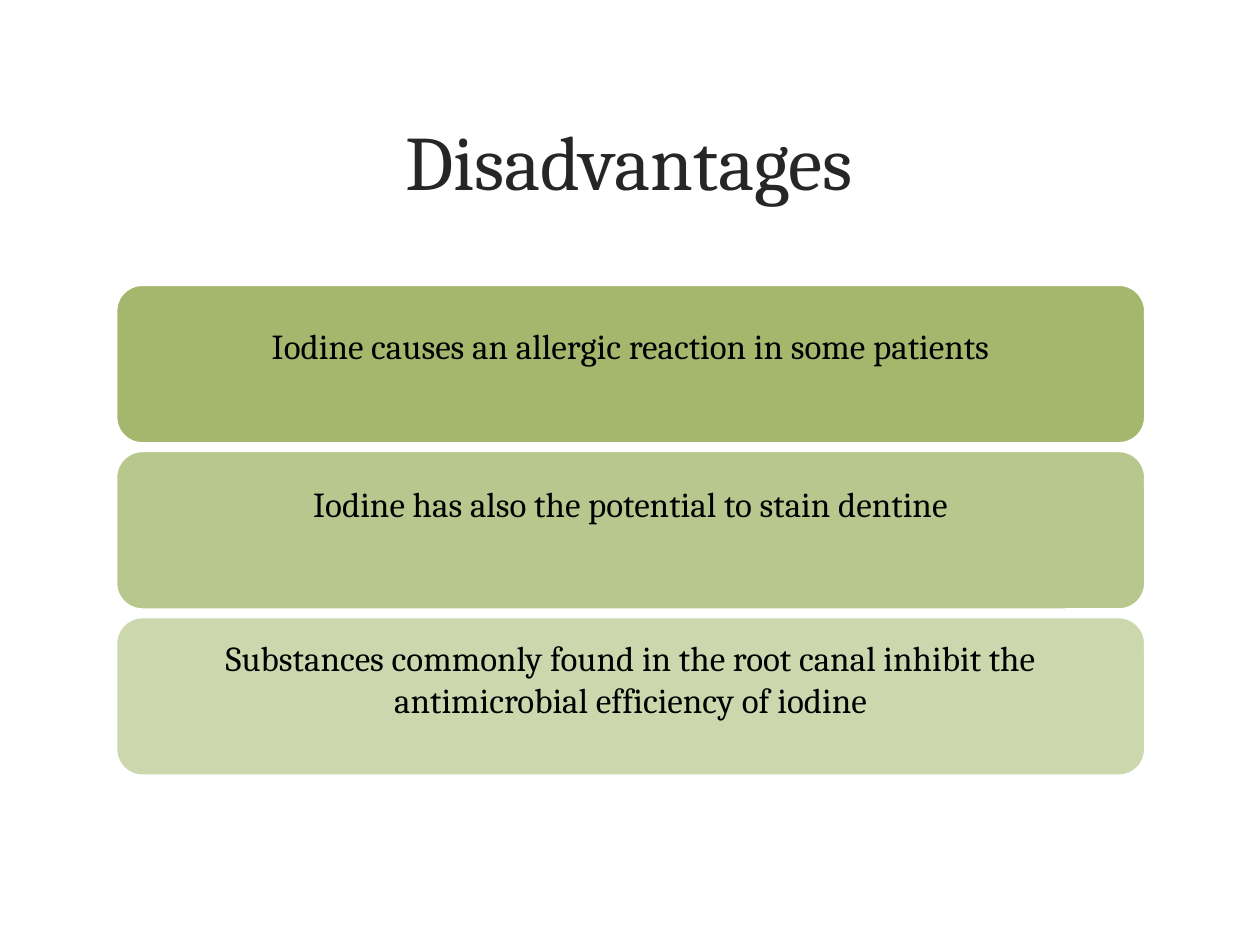
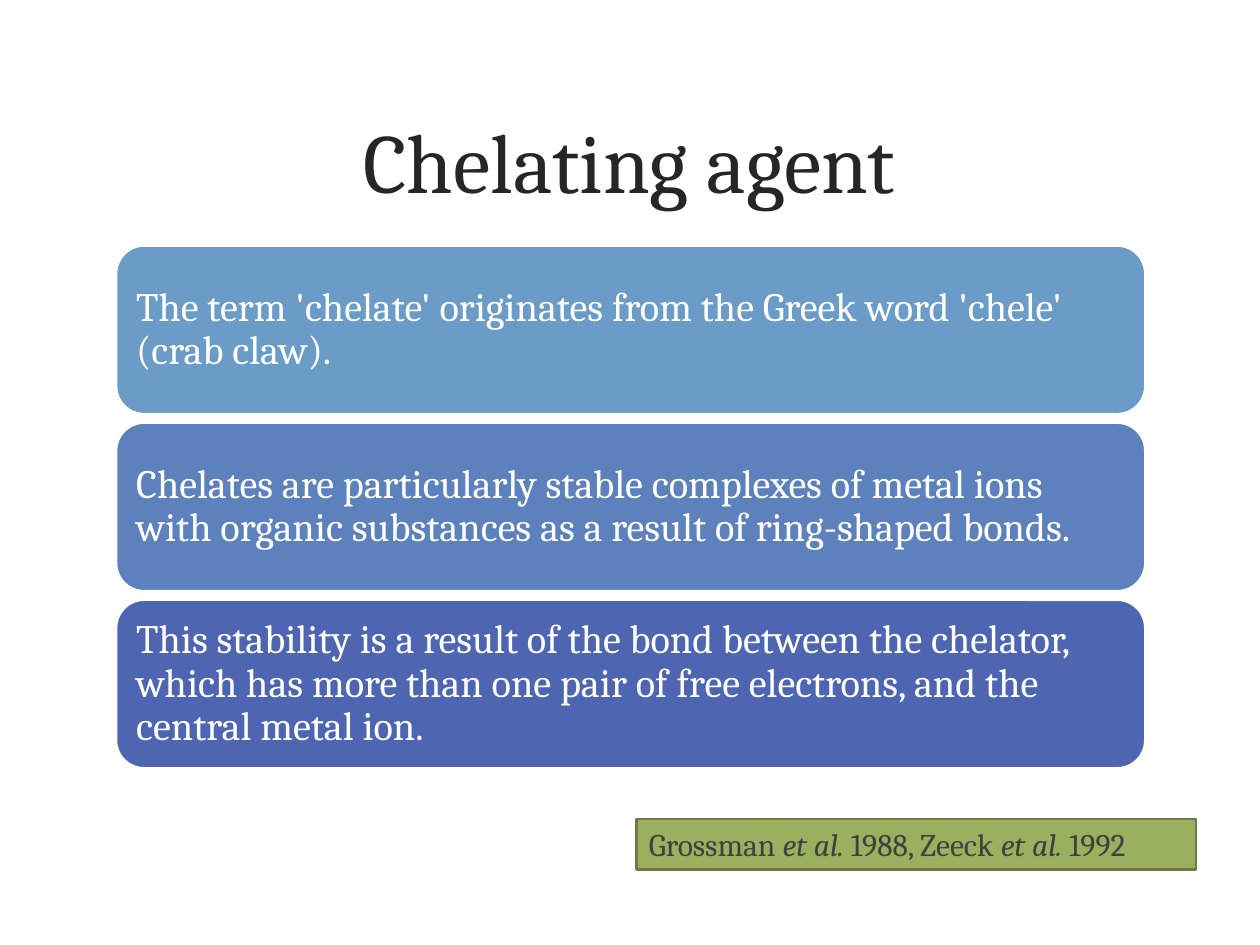
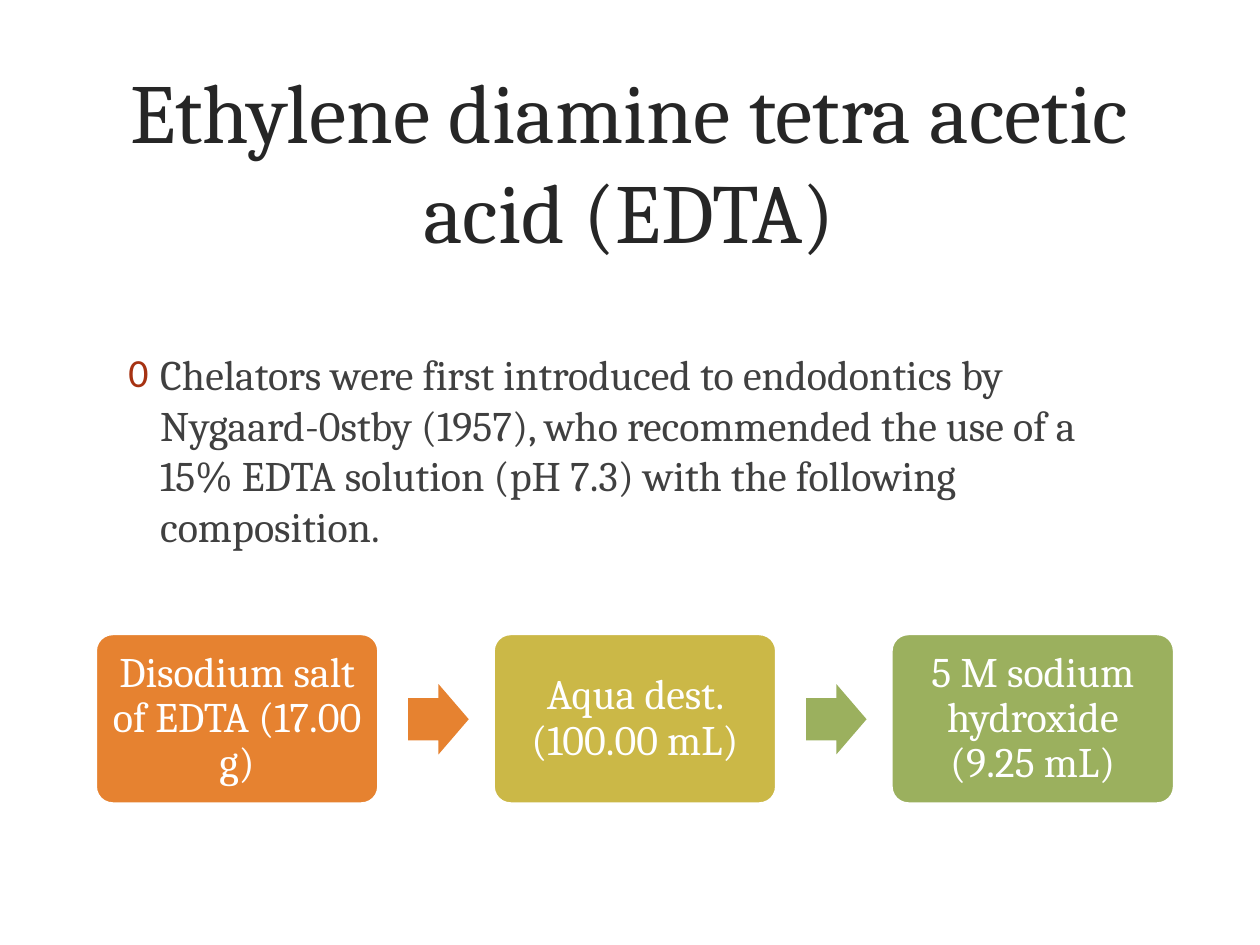
from dataclasses import dataclass

from lxml.etree import SubElement
from pptx import Presentation
from pptx.dml.color import RGBColor
from pptx.enum.shapes import MSO_SHAPE as Preset
from pptx.enum.text import MSO_ANCHOR as Anchor, PP_ALIGN as Align
from pptx.oxml.ns import qn
from pptx.shapes.autoshape import Shape
from pptx.slide import Slide
from pptx.text.text import TextFrame, _Paragraph as Paragraph
from pptx.util import Cm, Pt

FONT = "Cambria"
INK = RGBColor(0x26, 0x26, 0x26)
BODY_GREY = RGBColor(0x40, 0x40, 0x40)
BLACK = RGBColor(0x00, 0x00, 0x00)
WHITE = RGBColor(0xFF, 0xFF, 0xFF)
GREEN = RGBColor(0x9B, 0xB0, 0x5E)
DARK_GREEN = RGBColor(0x6E, 0x7C, 0x43)
SKY = RGBColor(0x6B, 0x9B, 0xC7)
BLUE = RGBColor(0x5C, 0x81, 0xBD)
INDIGO = RGBColor(0x4E, 0x66, 0xB2)
ORANGE = RGBColor(0xE6, 0x82, 0x30)
MUSTARD = RGBColor(0xCB, 0xB8, 0x47)
RUST = "A63212"


@dataclass(frozen=True)
class Area:
    """Left, top, width and height in centimetres."""
    left: float
    top: float
    width: float
    height: float

    def moved(self, right: float = 0, down: float = 0) -> "Area":
        return Area(self.left + right, self.top + down, self.width, self.height)

    def lengths(self) -> tuple[Cm, Cm, Cm, Cm]:
        return Cm(self.left), Cm(self.top), Cm(self.width), Cm(self.height)


@dataclass(frozen=True)
class Card:
    text: str
    fill: RGBColor
    opacity: int = 100
    lift: float = 0  # extra bottom margin, in centimetres
    line_spacing: float = 0.9


TITLE_AREA = Area(1.52, 1.22, 22.33, 4.01)
BODY_AREA = Area(2.34, 6.91, 20.75, 9.73)
CITATION_AREA = Area(12.83, 16.51, 11.28, 1.02)
DRAWBACK_AREA, DRAWBACK_PITCH = Area(2.34, 5.74, 20.75, 3.2), 3.35
CHELATE_AREA, CHELATE_PITCH = Area(2.34, 4.95, 20.75, 3.4), 3.57
STEP_AREA, STEP_PITCH = Area(1.93, 12.78, 5.7, 3.42), 8.02
ARROW_AREA = Area(8.23, 13.79, 1.22, 1.42)

DRAWBACKS = [
    Card("Iodine causes an allergic reaction in some patients", GREEN, 90, 0.74, 1),
    Card("Iodine has also the potential to stain dentine", GREEN, 70, 0.99),
    Card("Substances commonly found in the root canal inhibit the antimicrobial "
         "efficiency of iodine", GREEN, 50, 0.74, 1),
]
CHELATES = [
    Card("The term 'chelate' originates from the Greek word 'chele' (crab claw).", SKY),
    Card("Chelates are particularly stable complexes of metal ions with organic "
         "substances as a result of ring-shaped bonds.", BLUE),
    Card("This stability is a result of the bond between the chelator, which has more "
         "than one pair of free electrons, and the central metal ion.", INDIGO),
]
STEPS = [
    Card("Disodium salt of EDTA (17.00 g)", ORANGE),
    Card("Aqua dest. (100.00 mL)", MUSTARD),
    Card("5 M sodium hydroxide (9.25 mL)", GREEN),
]
ARROW_FILLS = [ORANGE, GREEN]


def write(frame: TextFrame, *texts: str, size: float, color: RGBColor,
          align: Align = Align.LEFT, anchor: Anchor = Anchor.MIDDLE,
          line_spacing: float = 1, inset: float | None = None,
          lift: float = 0) -> Paragraph:
    """Fill one paragraph; every second text is italic."""
    frame.word_wrap = True
    frame.vertical_anchor = anchor
    if inset is not None:
        frame.margin_left = frame.margin_right = frame.margin_top = Cm(inset)
        frame.margin_bottom = Cm(inset + lift)
    para = frame.paragraphs[0]
    para.alignment = align
    para.line_spacing = line_spacing
    for index, text in enumerate(texts):
        span = para.add_run()
        span.text = text
        span.font.name = FONT
        span.font.size = Pt(size)
        span.font.italic = index % 2 == 1
        span.font.color.rgb = color
    return para


def add_filled(page: Slide, preset: Preset, area: Area, fill: RGBColor,
               line: RGBColor | None = WHITE, opacity: int = 100) -> Shape:
    shape = page.shapes.add_shape(preset, *area.lengths())
    shape.shadow.inherit = False
    shape.fill.solid()
    shape.fill.fore_color.rgb = fill
    if opacity < 100:
        color = shape.fill._xPr.find(qn("a:solidFill"))[0]
        SubElement(color, qn("a:alpha"), val=str(opacity * 1000))
    if line is None:
        shape.line.fill.background()
    else:
        shape.line.color.rgb = line
        shape.line.width = Pt(1.5)
    return shape


def add_card(page: Slide, card: Card, area: Area, size: float, color: RGBColor,
             align: Align, inset: float = 0.24) -> Shape:
    shape = add_filled(page, Preset.ROUNDED_RECTANGLE, area, card.fill,
                       opacity=card.opacity)
    write(shape.text_frame, card.text, size=size, color=color, align=align,
          line_spacing=card.line_spacing, inset=inset, lift=card.lift)
    return shape


def add_titled_page(deck: Presentation, title: str, size: float) -> Slide:
    page = deck.slides.add_slide(deck.slide_layouts[6])
    box = page.shapes.add_textbox(*TITLE_AREA.lengths())
    write(box.text_frame, title, size=size, color=INK, align=Align.CENTER)
    return page


def add_bullet(para: Paragraph) -> None:
    properties = para._p.get_or_add_pPr()
    properties.set("marL", str(Cm(0.64)))
    properties.set("indent", str(-Cm(0.64)))
    SubElement(SubElement(properties, qn("a:buClr")), qn("a:srgbClr"), val=RUST)
    SubElement(properties, qn("a:buSzPct"), val="95000")
    SubElement(properties, qn("a:buFont"), typeface="+mn-lt")
    SubElement(properties, qn("a:buChar"), char="0")


def build_disadvantages(deck: Presentation) -> None:
    page = add_titled_page(deck, "Disadvantages", 44)
    for row, card in enumerate(DRAWBACKS):
        add_card(page, card, DRAWBACK_AREA.moved(down=row * DRAWBACK_PITCH),
                 20, BLACK, Align.CENTER, inset=0.2)


def build_chelating_agent(deck: Presentation) -> None:
    page = add_titled_page(deck, "Chelating agent", 48)
    for row, card in enumerate(CHELATES):
        add_card(page, card, CHELATE_AREA.moved(down=row * CHELATE_PITCH),
                 23, WHITE, Align.LEFT)
    citation = add_filled(page, Preset.RECTANGLE, CITATION_AREA, GREEN, DARK_GREEN)
    write(citation.text_frame, "Grossman ", "et al.", " 1988, Zeeck", " et al.", " 1992",
          size=18, color=BODY_GREY)


def build_edta(deck: Presentation) -> None:
    page = add_titled_page(deck, "Ethylene diamine tetra acetic acid (EDTA)", 48)
    body = page.shapes.add_textbox(*BODY_AREA.lengths())
    para = write(
        body.text_frame,
        "Chelators were first introduced to endodontics by Nygaard-0stby (1957), who "
        "recommended the use of a 15% EDTA solution (pH 7.3) with the following "
        "composition.",
        size=24, color=BODY_GREY, anchor=Anchor.TOP)
    add_bullet(para)
    for column, card in enumerate(STEPS):
        step = add_card(page, card, STEP_AREA.moved(right=column * STEP_PITCH),
                        24, WHITE, Align.CENTER)
        step.adjustments[0] = 0.1
    for column, fill in enumerate(ARROW_FILLS):
        arrow = add_filled(page, Preset.RIGHT_ARROW,
                           ARROW_AREA.moved(right=column * STEP_PITCH), fill, line=None)
        arrow.adjustments[0] = 0.6
        arrow.adjustments[1] = 0.5


def main() -> None:
    deck = Presentation()
    deck.slide_width, deck.slide_height = Cm(25.4), Cm(19.05)
    build_disadvantages(deck)
    build_chelating_agent(deck)
    build_edta(deck)
    deck.save("out.pptx")


if __name__ == "__main__":
    main()
